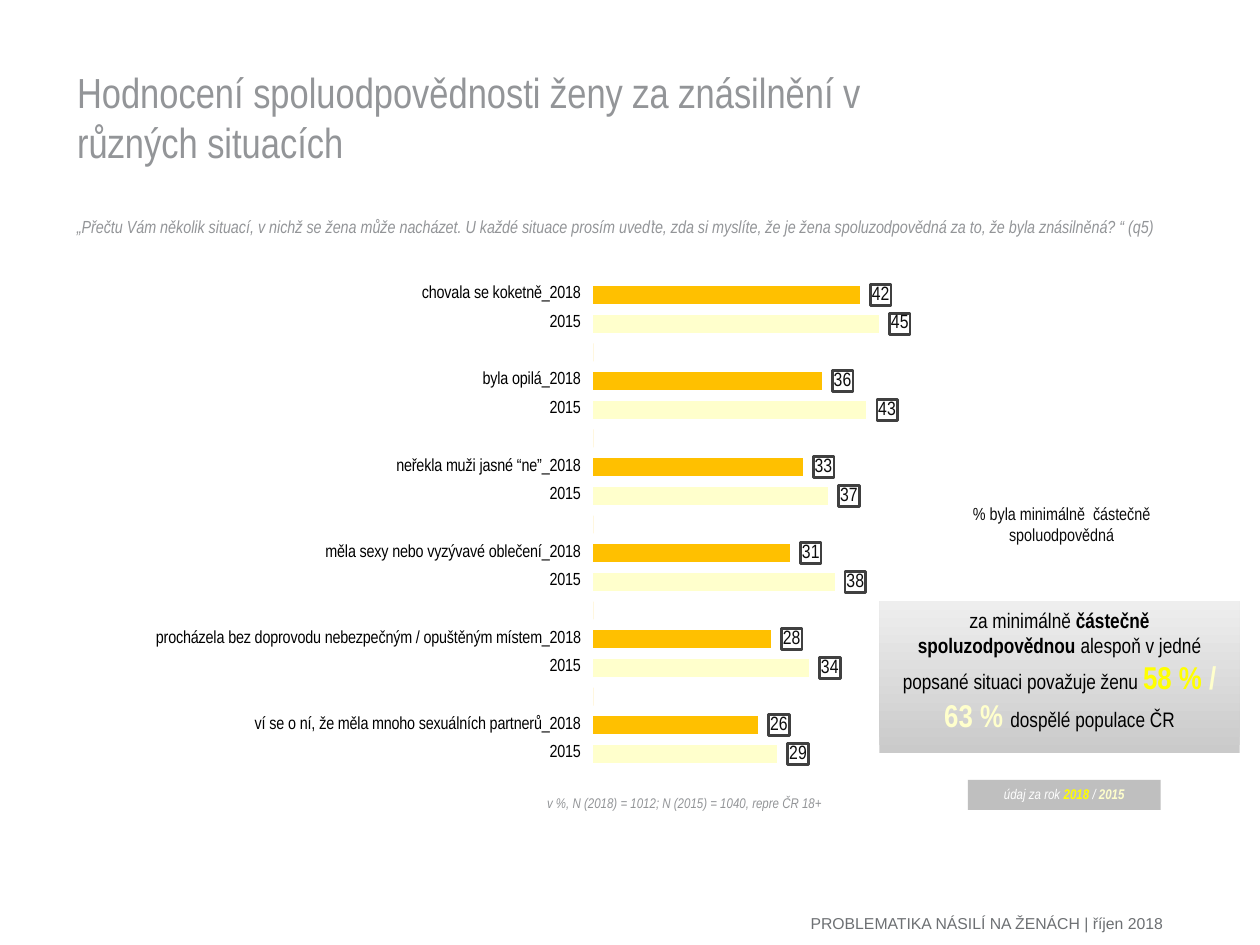
from pptx import Presentation
from pptx.chart.data import CategoryChartData
from pptx.dml.color import RGBColor
from pptx.enum import chart as charts, shapes, text
from pptx.oxml import parse_xml
from pptx.oxml.ns import nsdecls
from pptx.util import Cm, Pt

NARROW = "Arial Narrow"
BLACK = RGBColor(0x00, 0x00, 0x00)
INK = RGBColor(0x0D, 0x0D, 0x0D)
WHITE = RGBColor(0xFF, 0xFF, 0xFF)
GREY = RGBColor(0x93, 0x95, 0x98)
FOOTER_GREY = RGBColor(0x6D, 0x70, 0x73)
LEGEND_GREY = RGBColor(0xBF, 0xBF, 0xBF)
GRADIENT = RGBColor(0xCA, 0xCA, 0xCA), RGBColor(0xEE, 0xEE, 0xEE)
YELLOW = RGBColor(0xFF, 0xFF, 0x00)
CREAM = RGBColor(0xFF, 0xFF, 0xCC)
AMBER = RGBColor(0xFF, 0xC0, 0x00)


def write_text(frame, *runs, size, color, font=NARROW, italic=False,
               align=text.PP_ALIGN.LEFT, anchor=text.MSO_ANCHOR.TOP):
    """Fill a frame; a run is a string or (string, overriding formats)."""
    frame.word_wrap = True
    frame.auto_size = text.MSO_AUTO_SIZE.NONE
    frame.vertical_anchor = anchor
    paragraph = frame.paragraphs[0]
    paragraph.alignment = align
    for item in runs:
        words, style = (item, {}) if isinstance(item, str) else item
        run = paragraph.add_run()
        run.text = words
        run.font.name = font
        run.font.size = Pt(style.get("size", size))
        run.font.color.rgb = style.get("color", color)
        run.font.bold = style.get("bold", False)
        run.font.italic = italic


presentation = Presentation()
presentation.slide_width, presentation.slide_height = Cm(25.4), Cm(19.05)
slide = presentation.slides.add_slide(presentation.slide_layouts[5])
CENTER = text.PP_ALIGN.CENTER

# Title
title = slide.shapes.title
title.left, title.top, title.width, title.height = Cm(1.3), Cm(0.76), Cm(17.8), Cm(3.18)
write_text(title.text_frame,
           "Hodnocení spoluodpovědnosti ženy za znásilnění v různých situacích",
           size=24, color=GREY, anchor=text.MSO_ANCHOR.MIDDLE)

# Chart: a 2018 and a 2015 bar per situation, with an empty row between pairs
situations = [
    ("chovala se koketně", 42, 45),
    ("byla opilá", 36, 43),
    ("neřekla muži jasné “ne”", 33, 37),
    ("měla sexy nebo vyzývavé oblečení", 31, 38),
    ("procházela bez doprovodu nebezpečným / opuštěným místem", 28, 34),
    ("ví se o ní, že měla mnoho sexuálních partnerů", 26, 29),
]
categories, values = [], []
for situation, share_2018, share_2015 in situations:
    if categories:
        categories.append("")
        values.append(0)
    categories += [f"{situation}_2018", "2015"]
    values += [share_2018, share_2015]

chart_data = CategoryChartData(number_format="0")
chart_data.categories = categories
chart_data.add_series("Series 1", values)
chart = slide.shapes.add_chart(charts.XL_CHART_TYPE.BAR_STACKED, Cm(0.81), Cm(5.54),
                               Cm(24.23), Cm(10.01), chart_data).chart
chart.has_legend = False
chart.has_title = False
chart.font.name = "Arial"
chart.font.size = Pt(7.6)
chart.font.bold = True
chart.font.color.rgb = BLACK

category_axis = chart.category_axis
category_axis.reverse_order = True
category_axis.format.line.fill.background()
category_axis.tick_labels.font.name = NARROW
category_axis.tick_labels.font.size = Pt(10)
category_axis.tick_labels.font.bold = False
category_axis.tick_labels.font.color.rgb = BLACK
value_axis = chart.value_axis
value_axis.minimum_scale, value_axis.maximum_scale = 0, 100
value_axis.has_major_gridlines = False
value_axis.visible = False

plot = chart.plots[0]
plot.gap_width, plot.overlap = 60, 100
plot.vary_by_categories = False
series = plot.series[0]
series.format.fill.solid()
series.format.fill.fore_color.rgb = AMBER

labels = series.data_labels
labels.show_value = True
labels.number_format, labels.number_format_is_linked = "0", False
labels.position = charts.XL_LABEL_POSITION.INSIDE_END
labels.font.name = NARROW
labels.font.size = Pt(11)
labels.font.bold = False
labels.font.color.rgb = INK

# Boxed labels, moved just past the end of each bar; none on the empty rows
for index, value in enumerate(values):
    if index % 3 == 1:
        fill = series.points[index].format.fill
        fill.solid()
        fill.fore_color.rgb = CREAM
    if value:
        body = (
            '<c:layout><c:manualLayout><c:x val="0.03"/><c:y val="0"/>'
            '</c:manualLayout></c:layout>'
            '<c:numFmt formatCode="0" sourceLinked="0"/>'
            '<c:spPr><a:noFill/><a:ln w="19050"><a:solidFill>'
            '<a:srgbClr val="404040"/></a:solidFill></a:ln></c:spPr>'
            '<c:dLblPos val="inEnd"/><c:showLegendKey val="0"/><c:showVal val="1"/>'
            '<c:showCatName val="0"/><c:showSerName val="0"/>'
            '<c:showPercent val="0"/><c:showBubbleSize val="0"/>')
    else:
        body = '<c:delete val="1"/>'
    labels._element.insert(index, parse_xml(
        f'<c:dLbl {nsdecls("c", "a")}><c:idx val="{index}"/>{body}</c:dLbl>'))

# Fixed place of the plot inside the chart
chart._chartSpace.chart.plotArea.get_or_add_layout().append(parse_xml(
    f'<c:manualLayout {nsdecls("c")}><c:layoutTarget val="inner"/>'
    '<c:xMode val="edge"/><c:yMode val="edge"/><c:x val="0.46"/><c:y val="0.012"/>'
    '<c:w val="0.529"/><c:h val="0.982"/></c:manualLayout>')) \
    if hasattr(chart._chartSpace.chart.plotArea, "get_or_add_layout") else \
    chart._chartSpace.chart.plotArea.insert(0, parse_xml(
        f'<c:layout {nsdecls("c")}><c:manualLayout><c:layoutTarget val="inner"/>'
        '<c:xMode val="edge"/><c:yMode val="edge"/><c:x val="0.46"/><c:y val="0.012"/>'
        '<c:w val="0.529"/><c:h val="0.982"/></c:manualLayout></c:layout>'))

# Question, sample note, chart caption and footer
captions = [
    ((1.3, 4.22, 23.27, 0.81),
     "„Přečtu Vám několik situací, v nichž se žena může nacházet. U každé situace prosím "
     "uveďte, zda si myslíte, že je žena spoluzodpovědná za to, že byla znásilněná? “ (q5)",
     dict(size=10, color=GREY, italic=True)),
    ((9.88, 15.9, 7.85, 0.61), "v %, N (2018) = 1012; N (2015) = 1040, repre ČR 18+",
     dict(size=8, color=GREY, italic=True, align=CENTER)),
    ((19.1, 10.01, 4.6, 1.12), "% byla minimálně  částečně spoluodpovědná",
     dict(size=10, color=INK, align=CENTER)),
    ((1.24, 17.93, 22.45, 0.99), "PROBLEMATIKA NÁSILÍ NA ŽENÁCH | říjen 2018",
     dict(size=9, color=FOOTER_GREY, font="Arial", align=text.PP_ALIGN.RIGHT,
          anchor=text.MSO_ANCHOR.BOTTOM)),
]
for box, words, style in captions:
    caption = slide.shapes.add_textbox(*map(Cm, box))
    write_text(caption.text_frame, words, **style)

# Summary panel and year key
panels = []
for box in [(17.73, 12.12, 7.26, 3.07), (19.51, 15.72, 3.89, 0.61)]:
    panel = slide.shapes.add_shape(shapes.MSO_SHAPE.RECTANGLE, *map(Cm, box))
    panel.shadow.inherit = False
    panel.line.fill.background()
    panels.append(panel)
summary, year_key = panels

summary.fill.gradient()
summary.fill.gradient_angle = 90
for stop, color in zip(summary.fill.gradient_stops, GRADIENT):
    stop.color.rgb = color
write_text(summary.text_frame, "za minimálně ",
           ("částečně spoluzodpovědnou ", dict(bold=True)),
           "alespoň v jedné popsané situaci považuje ženu ",
           ("58 % ", dict(size=18, color=YELLOW, bold=True)),
           ("/ 63 % ", dict(size=18, color=CREAM, bold=True)),
           "dospělé populace ČR", size=12, color=BLACK, align=CENTER)

year_key.fill.solid()
year_key.fill.fore_color.rgb = LEGEND_GREY
write_text(year_key.text_frame, "údaj za rok ", ("2018 ", dict(color=YELLOW, bold=True)),
           "/ ", ("2015", dict(color=CREAM, bold=True)),
           size=8, color=WHITE, italic=True, align=CENTER)

presentation.save("out.pptx")
